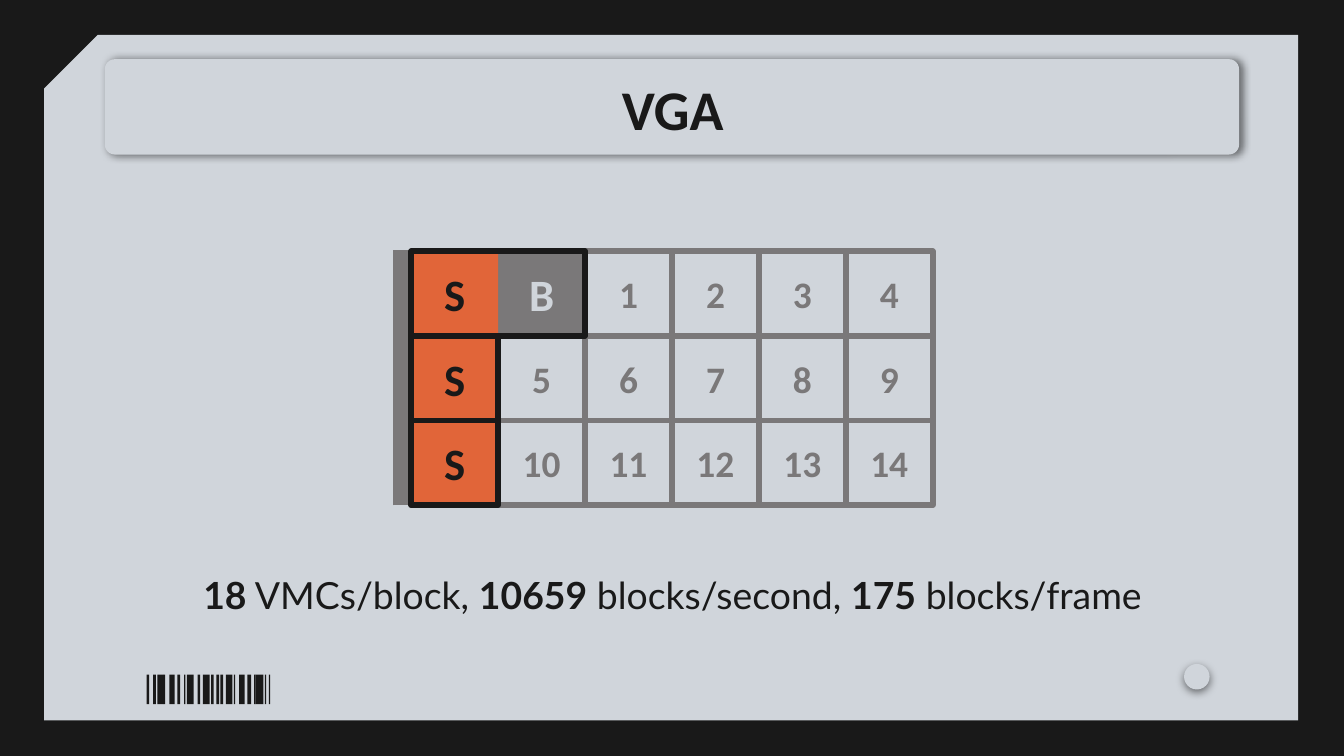
"""Build the VGA memory-cycle block slide."""
from dataclasses import dataclass

from lxml import etree
from pptx import Presentation
from pptx.dml.color import RGBColor
from pptx.enum.shapes import MSO_CONNECTOR, MSO_SHAPE
from pptx.enum.text import MSO_ANCHOR, MSO_AUTO_SIZE, PP_ALIGN
from pptx.oxml.ns import qn
from pptx.shapes.autoshape import Shape
from pptx.text.text import TextFrame
from pptx.util import Inches, Pt

RECT = MSO_SHAPE.RECTANGLE
ROUND_RECT = MSO_SHAPE.ROUNDED_RECTANGLE
SNIP_RECT = MSO_SHAPE.SNIP_1_RECTANGLE
OVAL = MSO_SHAPE.OVAL
STRAIGHT = MSO_CONNECTOR.STRAIGHT
MIDDLE = MSO_ANCHOR.MIDDLE
CENTER = PP_ALIGN.CENTER
NO_FIT = MSO_AUTO_SIZE.NONE
GROW = MSO_AUTO_SIZE.SHAPE_TO_FIT_TEXT

COLORS = {"dark": "191919", "light": "D0D5DB", "gray": "7A7879",
          "orange": "E16539", "black": "000000"}
GRID_X, GRID_Y = 3.06, 1.87
CELL_W, CELL_H = 3.88 / 6, 0.63
BAR_Y, BAR_H = 5.02, 0.22
BARS = [(1.09, 0.02), (1.14, 0.02), (1.17, 0.05), (1.22, 0.01), (1.26, 0.04),
        (1.32, 0.02), (1.37, 0.01), (1.39, 0.05), (1.47, 0.02), (1.51, 0.05),
        (1.57, 0.02), (1.61, 0.02), (1.64, 0.02), (1.68, 0.05), (1.74, 0.01),
        (1.78, 0.04), (1.84, 0.03), (1.89, 0.01), (1.9, 0.06), (1.97, 0.01),
        (2, 0.01)]
CAPTION = [("18", True), (" VMCs/block, ", False), ("10659", True),
           (" blocks/second, ", False), ("175", True), (" blocks/frame", False)]


@dataclass(frozen=True)
class Cell:
    """One slot of the block grid."""
    row: int
    col: int
    label: str
    fill: str | None = None
    line: str | None = "gray"
    color: str = "gray"
    size: int = 20


NUMBERS = [Cell(*divmod(slot, 6), str(n)) for n, slot in enumerate(
    (slot for slot in range(2, 18) if slot % 6), start=1)]
CELLS = NUMBERS + [
    Cell(1, 0, "S", "orange", "dark", "dark", 24),
    Cell(2, 0, "S", "orange", "dark", "dark", 24),
    Cell(0, 1, "B", "gray", "gray", "light", 24),
    Cell(0, 0, "S", "orange", None, "dark", 24),
]


def rgb(name: str) -> RGBColor:
    """Return the named colour."""
    return RGBColor.from_string(COLORS[name])


def add_text(tf: TextFrame, text: str, *, size: int, color: str = "dark",
             font: str = "Calibri", bold: bool = True) -> None:
    """Append a formatted run to the centred first paragraph."""
    tf.margin_left = tf.margin_right = Inches(0.1)
    tf.margin_top = tf.margin_bottom = Inches(0.1)
    tf.word_wrap = True
    p = tf.paragraphs[0]
    p.alignment = CENTER
    r = p.add_run()
    r.text = text
    r.font.name = font
    r.font.size = Pt(size)
    r.font.bold = bold
    r.font.color.rgb = rgb(color)


def add_box(shapes, kind: MSO_SHAPE, x: float, y: float, w: float, h: float, *,
            fill: str | None = None, line: str | None = None) -> Shape:
    """Draw a preset shape without a shadow."""
    sp = shapes.add_shape(kind, Inches(x), Inches(y), Inches(w), Inches(h))
    sp.shadow.inherit = False
    if fill:
        sp.fill.solid()
        sp.fill.fore_color.rgb = rgb(fill)
    else:
        sp.fill.background()
    if line:
        sp.line.color.rgb = rgb(line)
        sp.line.width = Pt(3)
    else:
        sp.line.fill.background()
    return sp


def add_shadow(sp: Shape, angle: int) -> None:
    """Give the shape a soft outer shadow."""
    effects = sp.element.spPr.find(qn("a:effectLst"))
    shadow = etree.SubElement(effects, qn("a:outerShdw"), blurRad=str(Pt(4.5)),
                              dist=str(Pt(1.5)), dir=str(angle * 60000),
                              algn="bl", rotWithShape="0")
    color = etree.SubElement(shadow, qn("a:srgbClr"), val=COLORS["black"])
    etree.SubElement(color, qn("a:alpha"), val="50000")


def add_frame(s) -> None:
    """Draw the panel, title plate, dot and barcode."""
    panel = add_box(s.shapes, SNIP_RECT, 0.33, 0.26, 9.33, 5.1, fill="light")
    panel.adjustments[0] = 0.078
    panel.element.spPr.xfrm.set("flipH", "1")
    plate = add_box(s.shapes, ROUND_RECT, 0.78, 0.44, 8.44, 0.71, fill="light")
    plate.adjustments[0] = 0.106
    add_shadow(plate, 6)
    dot = add_box(s.shapes, OVAL, 8.81, 4.94, 0.19, 0.19, fill="light")
    add_shadow(dot, 90)
    barcode = s.shapes.add_group_shape()
    for x, w in BARS:
        add_box(barcode.shapes, RECT, x, BAR_Y, w, BAR_H, fill="dark")


def add_title(s) -> None:
    """Fill the title placeholder and bring it in front of its plate."""
    title = s.shapes.title
    title.left, title.top = Inches(0.79), Inches(0.49)
    title.width, title.height = Inches(8.43), Inches(0.63)
    tf = title.text_frame
    add_text(tf, "VGA", size=30)
    tf.vertical_anchor = MIDDLE
    tf.auto_size = NO_FIT
    title.element.getparent().append(title.element)


def add_cell(s, cell: Cell) -> None:
    """Draw one labelled grid cell."""
    sp = add_box(s.shapes, RECT, GRID_X + cell.col * CELL_W,
                 GRID_Y + cell.row * CELL_H, CELL_W, CELL_H,
                 fill=cell.fill, line=cell.line)
    add_text(sp.text_frame, cell.label, size=cell.size, color=cell.color)
    sp.text_frame.vertical_anchor = MIDDLE


def add_grid(s) -> None:
    """Draw the left rail, the cells and the outline of the first pair."""
    rail = s.shapes.add_connector(STRAIGHT, Inches(2.99), Inches(3.76),
                                  Inches(2.99), Inches(1.86))
    rail.line.color.rgb = rgb("gray")
    rail.line.width = Pt(9)
    etree.SubElement(rail.element.spPr, qn("a:effectLst"))
    for cell in CELLS:
        add_cell(s, cell)
    add_box(s.shapes, RECT, GRID_X, GRID_Y, 2 * CELL_W, CELL_H, line="dark")


def add_caption(s) -> None:
    """Write the throughput line below the grid."""
    box = s.shapes.add_textbox(Inches(0.79), Inches(4.11), Inches(8.43), Inches(0.54))
    tf = box.text_frame
    for text, bold in CAPTION:
        add_text(tf, text, size=20, font="Lato", bold=bold)
    tf.auto_size = GROW
    p = tf.paragraphs[0]
    p.line_spacing = 1.15
    p.space_after = Pt(16)


def main() -> None:
    """Build and save the slide."""
    prs = Presentation()
    prs.slide_width = Inches(10)
    prs.slide_height = prs.slide_width * 9 // 16
    s = prs.slides.add_slide(prs.slide_layouts[5])
    s.background.fill.solid()
    s.background.fill.fore_color.rgb = rgb("dark")
    add_frame(s)
    add_title(s)
    add_grid(s)
    add_caption(s)
    prs.save("out.pptx")


if __name__ == "__main__":
    main()
